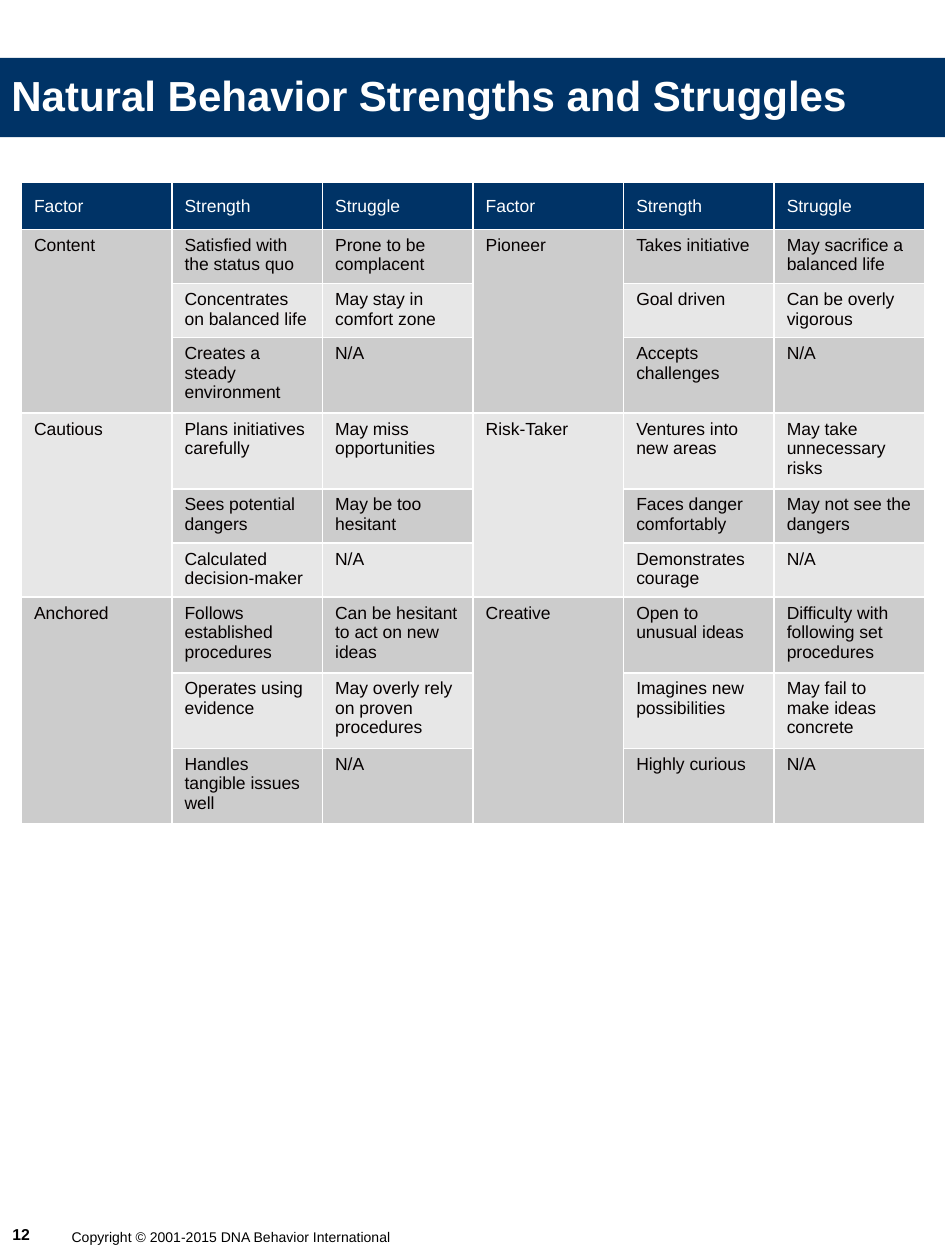
from pptx import Presentation
from pptx.dml.color import RGBColor
from pptx.enum import shapes, text
from pptx.util import Inches, Pt

NAVY, WHITE, BLACK, INK = "003366", "FFFFFF", "000000", "050000"
BANDS = ("E7E7E7", "CCCCCC")
HEADS = ("Factor", "Strength", "Struggle") * 2
ROW_HEIGHTS = (0.37, 0.43, 0.43, 0.6, 0.6, 0.43, 0.43, 0.6, 0.6, 0.6)
GROUP = 3
ROWS = (
    ("Content", "Satisfied with the status quo", "Prone to be complacent",
     "Pioneer", "Takes initiative", "May sacrifice a balanced life"),
    ("", "Concentrates on balanced life", "May stay in comfort zone",
     "", "Goal driven", "Can be overly vigorous"),
    ("", "Creates a steady environment", "N/A",
     "", "Accepts challenges", "N/A"),
    ("Cautious", "Plans initiatives carefully", "May miss opportunities",
     "Risk-Taker", "Ventures into new areas", "May take unnecessary risks"),
    ("", "Sees potential dangers", "May be too hesitant",
     "", "Faces danger comfortably", "May not see the dangers"),
    ("", "Calculated decision-maker", "N/A",
     "", "Demonstrates courage", "N/A"),
    ("Anchored", "Follows established procedures", "Can be hesitant to act on new ideas",
     "Creative", "Open to unusual ideas", "Difficulty with following set procedures"),
    ("", "Operates using evidence", "May overly rely on proven procedures",
     "", "Imagines new possibilities", "May fail to make ideas concrete"),
    ("", "Handles tangible issues well", "N/A",
     "", "Highly curious", "N/A"),
)


def paint(fill, color):
    """Give a fill one solid colour."""
    fill.solid()
    fill.fore_color.rgb = RGBColor.from_string(color)


def write(tf, words, size, color, bold=False):
    """Write one left-aligned paragraph into a text frame."""
    tf.text = words
    p = tf.paragraphs[0]
    p.alignment = text.PP_ALIGN.LEFT
    p.font.name, p.font.size, p.font.bold = "Arial", Pt(size), bold
    p.font.color.rgb = RGBColor.from_string(color)


def add_heading(s, left, top, width, height):
    """Place the navy band and the slide title on it."""
    band = s.shapes.add_shape(shapes.MSO_SHAPE.RECTANGLE, left, top, width, height)
    band.shadow.inherit = False
    paint(band.fill, NAVY)
    band.line.fill.background()
    title = s.shapes.title
    band._element.addnext(title._element)
    title.left, title.top = left - Inches(0.01), top + Inches(0.04)
    title.width, title.height = width, Inches(0.5)
    tf = title.text_frame
    tf.word_wrap = True
    tf.auto_size = text.MSO_AUTO_SIZE.NONE
    tf.vertical_anchor = text.MSO_ANCHOR.TOP
    write(tf, "Natural Behavior Strengths and Struggles", 24, WHITE, True)


def add_factor_table(s, left, top, width, height):
    """Place the table of factors, each spanning a group of rows."""
    table = s.shapes.add_table(len(ROWS) + 1, len(HEADS), left, top, width, height).table
    for column in table.columns:
        column.width = width // len(HEADS)
    for row, row_height in zip(table.rows, ROW_HEIGHTS):
        row.height = Inches(row_height)
    for i, row in enumerate((HEADS, *ROWS)):
        for j, words in enumerate(row):
            cell = table.cell(i, j)
            paint(cell.fill, BANDS[i % 2] if i else NAVY)
            cell.vertical_anchor = text.MSO_ANCHOR.TOP if i else text.MSO_ANCHOR.MIDDLE
            if words:
                write(cell.text_frame, words, 10, INK if i else WHITE)
    for i in range(1, len(ROWS) + 1, GROUP):
        for j in (0, 3):
            table.cell(i, j).merge(table.cell(i + GROUP - 1, j))


def add_footer(s, left, top):
    """Place the page number and the copyright line."""
    parts = (
        ("12", 0, 0, 0.53, 0.25, 9, True),
        ("Copyright © 2001-2015 DNA Behavior International", 0.47, 0.03, 2.78, 0.24, 8, False),
    )
    for words, x, y, width, height, size, bold in parts:
        box = s.shapes.add_textbox(left + Inches(x), top + Inches(y), Inches(width), Inches(height))
        tf = box.text_frame
        tf.word_wrap = bold
        tf.vertical_anchor = text.MSO_ANCHOR.MIDDLE
        write(tf, words, size, BLACK, bold)


def main():
    """Build the slide and save it."""
    prs = Presentation()
    prs.slide_width, prs.slide_height = Inches(7.5), Inches(10)
    s = prs.slides.add_slide(prs.slide_layouts[5])
    add_heading(s, Inches(0), Inches(0.46), prs.slide_width, Inches(0.63))
    add_factor_table(s, Inches(0.17), Inches(1.45), Inches(7.17), Inches(5.1))
    add_footer(s, Inches(0), Inches(9.67))
    prs.save("out.pptx")


if __name__ == "__main__":
    main()
